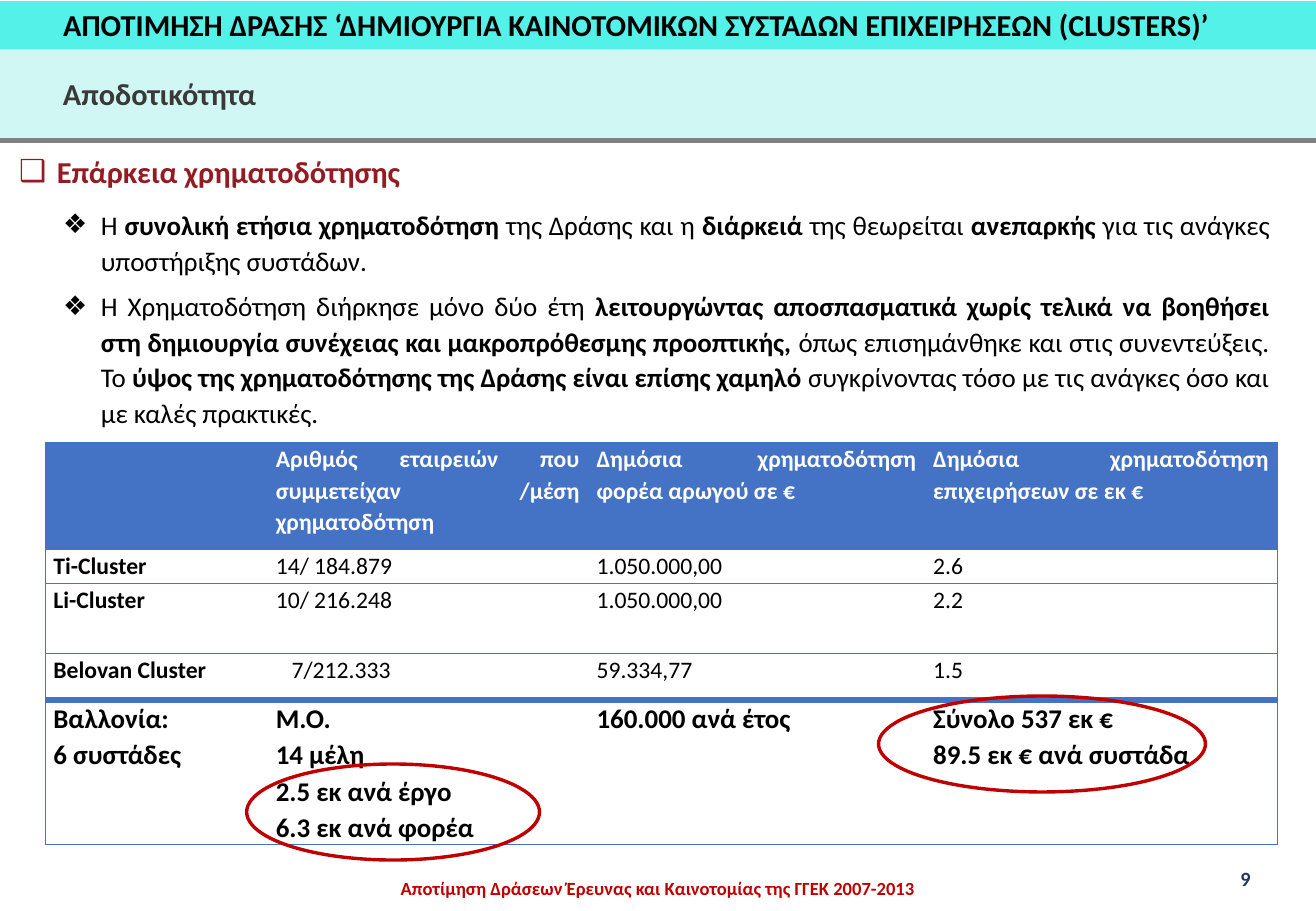
import pptx
import pptx.util
import pptx.dml.color
import pptx.enum.shapes
import pptx.enum.text
import pptx.oxml
import pptx.oxml.ns

Inches = pptx.util.Inches
Pt = pptx.util.Pt
RGBColor = pptx.dml.color.RGBColor
Align = pptx.enum.text.PP_ALIGN
Shape = pptx.enum.shapes.MSO_SHAPE

BLACK = RGBColor(0x00, 0x00, 0x00)
WHITE = RGBColor(0xFF, 0xFF, 0xFF)
GREY = RGBColor(0x80, 0x80, 0x80)
CHARCOAL = RGBColor(0x3B, 0x38, 0x38)
TURQUOISE = RGBColor(0x53, 0xF1, 0xE8)
PALE = RGBColor(0xD0, 0xF7, 0xF3)
BLUE = RGBColor(0x44, 0x72, 0xC4)
NAVY = RGBColor(0x20, 0x38, 0x64)
RED = RGBColor(0xC0, 0x00, 0x00)
MAROON = RGBColor(0x93, 0x1B, 0x21)

POINTS = [
    [("Η ", False), ("συνολική ετήσια χρηματοδότηση ", True),
     ("της Δράσης και η ", False), ("διάρκειά", True),
     (" της θεωρείται ", False), ("ανεπαρκής ", True),
     ("για τις ανάγκες υποστήριξης συστάδων.", False)],
    [("Η Χρηματοδότηση διήρκησε μόνο δύο έτη ", False),
     ("λειτουργώντας αποσπασματικά χωρίς τελικά να βοηθήσει στη δημιουργία "
      "συνέχειας και μακροπρόθεσμης προοπτικής, ", True),
     ("όπως επισημάνθηκε και στις συνεντεύξεις. Το ", False),
     ("ύψος της χρηματοδότησης της Δράσης είναι επίσης χαμηλό", True),
     (" συγκρίνοντας τόσο με τις ανάγκες όσο και με καλές πρακτικές.", False)],
]
FUNDING = [
    ["", "Αριθμός εταιρειών που συμμετείχαν /μέση χρηματοδότηση",
     "Δημόσια χρηματοδότηση φορέα αρωγού σε €",
     "Δημόσια χρηματοδότηση επιχειρήσεων σε εκ €"],
    ["Ti-Cluster", "14/ 184.879", "1.050.000,00", "2.6"],
    ["Li-Cluster", "10/ 216.248", "1.050.000,00", "2.2"],
    ["Belovan Cluster", "7/212.333", "59.334,77", "1.5"],
    ["Βαλλονία:\n6 συστάδες", "Μ.Ο.\n14 μέλη\n2.5 εκ ανά έργο\n6.3 εκ ανά φορέα",
     "160.000 ανά έτος", "Σύνολο 537 εκ €\n89.5 εκ € ανά συστάδα"],
]
COL_WIDTHS = [1.83, 2.64, 2.77, 2.9]
ROW_HEIGHTS = [0.88, 0.28, 0.58, 0.38, 1.17]


class SlideBuilder:
    """Draws styled elements on the current slide."""

    font = "Calibri"

    def __init__(self, slide):
        self.slide = slide

    def place(self, sp, box):
        sp.left, sp.top, sp.width, sp.height = map(Inches, box)

    def style(self, p, size, color, bold=None):
        for r in p.runs:
            r.font.name, r.font.size = self.font, Pt(size)
            r.font.color.rgb = color
            if bold is not None:
                r.font.bold = bold

    def bullet(self, p, char):
        pPr = p._p.get_or_add_pPr()
        pPr.set("marL", str(Inches(0.31)))
        pPr.set("indent", str(-Inches(0.31)))
        ns = pptx.oxml.ns.nsdecls("a")
        pPr.append(pptx.oxml.parse_xml(f'<a:buFont {ns} typeface="Arial"/>'))
        pPr.append(pptx.oxml.parse_xml(f'<a:buChar {ns} char="{char}"/>'))

    def frame(self, sp):
        tf = sp.text_frame
        tf.word_wrap = True
        tf.auto_size = pptx.enum.text.MSO_AUTO_SIZE.NONE
        tf.vertical_anchor = pptx.enum.text.MSO_ANCHOR.TOP
        return tf

    def title(self, text, box):
        sp = self.slide.shapes.title
        self.place(sp, box)
        tf = self.frame(sp)
        tf.text = text
        p = tf.paragraphs[0]
        p.alignment = Align.LEFT
        self.style(p, 18, BLACK, True)

    def body(self, points, box):
        sp = self.slide.placeholders[1]
        self.place(sp, box)
        tf = self.frame(sp)
        for i, parts in enumerate(points):
            p = tf.add_paragraph() if i else tf.paragraphs[0]
            p.alignment, p.line_spacing = Align.JUSTIFY, 1.1
            p.space_before, p.space_after = Pt(0), Pt(6)
            self.bullet(p, "❖")
            for text, bold in parts:
                r = p.add_run()
                r.text, r.font.bold = text, bold
            self.style(p, 16, BLACK)

    def text(self, text, box, size, color, align=Align.LEFT, bullet=None):
        tf = self.frame(self.slide.shapes.add_textbox(*map(Inches, box)))
        tf.text = text
        p = tf.paragraphs[0]
        p.alignment = align
        if bullet:
            self.bullet(p, bullet)
        self.style(p, size, color, True)

    def shape(self, kind, box, fill=None, line=None):
        sp = self.slide.shapes.add_shape(kind, *map(Inches, box))
        sp.shadow.inherit = False
        if fill is None:
            sp.fill.background()
        else:
            sp.fill.solid()
            sp.fill.fore_color.rgb = fill
        if line is None:
            sp.line.fill.background()
        else:
            sp.line.color.rgb, sp.line.width = line, Pt(2)

    def rule(self, y, width, color):
        line = self.slide.shapes.add_connector(
            pptx.enum.shapes.MSO_CONNECTOR.STRAIGHT,
            Inches(0), Inches(y), Inches(width), Inches(y))
        line.line.color.rgb, line.line.width = color, Pt(3)
        line._element.spPr.append(pptx.oxml.parse_xml(
            f'<a:effectLst {pptx.oxml.ns.nsdecls("a")}/>'))

    def border(self, cell, side, width):
        cell._tc.get_or_add_tcPr().append(pptx.oxml.parse_xml(
            f'<a:ln{side} {pptx.oxml.ns.nsdecls("a")} w="{Pt(width)}">'
            f'<a:solidFill><a:srgbClr val="{BLUE}"/></a:solidFill></a:ln{side}>'))

    def table(self, rows, left, top, widths, heights):
        tbl = self.slide.shapes.add_table(
            len(rows), len(widths), Inches(left), Inches(top),
            Inches(sum(widths)), Inches(sum(heights))).table
        style_id = tbl._tbl.tblPr.find(pptx.oxml.ns.qn("a:tableStyleId"))
        style_id.text = "{2D5ABB26-0587-4C30-8999-92F81FD0307C}"
        for col, width in zip(tbl.columns, widths):
            col.width = Inches(width)
        for row, height in zip(tbl.rows, heights):
            row.height = Inches(height)
        last_row, last_col = len(rows) - 1, len(widths) - 1
        for i, row in enumerate(rows):
            for j, text in enumerate(row):
                cell = tbl.cell(i, j)
                cell.margin_left = cell.margin_right = Inches(0.07)
                cell.margin_top = cell.margin_bottom = 0
                if j == 0:
                    self.border(cell, "L", 0.5)
                if j == last_col:
                    self.border(cell, "R", 0.5)
                self.border(cell, "T", 4 if i == last_row else 0.5)
                self.border(cell, "B", 4 if i == last_row - 1 else 0.5)
                cell.fill.solid()
                cell.fill.fore_color.rgb = WHITE if i else BLUE
                cell.text_frame.text = text
                for p in cell.text_frame.paragraphs:
                    p.line_spacing = 1.1
                    p.alignment = Align.LEFT if i else Align.JUSTIFY
                    self.style(p, 16 if i == last_row else 14,
                               BLACK if i else WHITE,
                               j == 0 or i in (0, last_row))
        return tbl


def main():
    prs = pptx.Presentation()
    prs.slide_width, prs.slide_height = Inches(10.83), Inches(7.5)
    s = SlideBuilder(prs.slides.add_slide(prs.slide_layouts[1]))
    s.shape(Shape.RECTANGLE, (0, 0.01, 10.83, 0.4), fill=TURQUOISE)
    s.shape(Shape.RECTANGLE, (0, 0.41, 10.83, 0.75), fill=PALE)
    s.rule(1.16, 10.83, GREY)
    tree = s.slide.shapes._spTree
    for band in list(s.slide.shapes)[:1:-1]:
        tree.insert(2, band._element)
    s.title("ΑΠΟΤΙΜΗΣΗ ΔΡΑΣΗΣ ‘ΔΗΜΙΟΥΡΓΙΑ ΚΑΙΝΟΤΟΜΙΚΩΝ ΣΥΣΤΑΔΩΝ "
            "ΕΠΙΧΕΙΡΗΣΕΩΝ (CLUSTERS)’", (0.42, 0, 10.36, 0.4))
    s.text("Αποδοτικότητα", (0.42, 0.57, 2.8, 0.4), 18, CHARCOAL)
    s.text("Επάρκεια χρηματοδότησης", (0.06, 1.21, 5.43, 0.4), 18, MAROON,
           Align.JUSTIFY, "❑")
    s.body(POINTS, (0.42, 1.64, 10.13, 2.33))
    tbl = s.table(FUNDING, 0.37, 3.64, COL_WIDTHS, ROW_HEIGHTS)
    tbl.cell(3, 1).margin_left = Inches(0.2)
    s.shape(Shape.OVAL, (2.03, 6.29, 2.41, 0.79), line=RED)
    s.shape(Shape.OVAL, (7.23, 5.73, 2.69, 0.79), line=RED)
    s.text("Aποτίμηση Δράσεων Έρευνας και Καινοτομίας της ΓΓΕΚ 2007-2013",
           (2.82, 7.17, 5.19, 0.3), 11, RED, Align.CENTER)
    s.text("9", (10.11, 7.08, 0.52, 0.3), 12, NAVY)
    prs.save("out.pptx")


if __name__ == "__main__":
    main()
